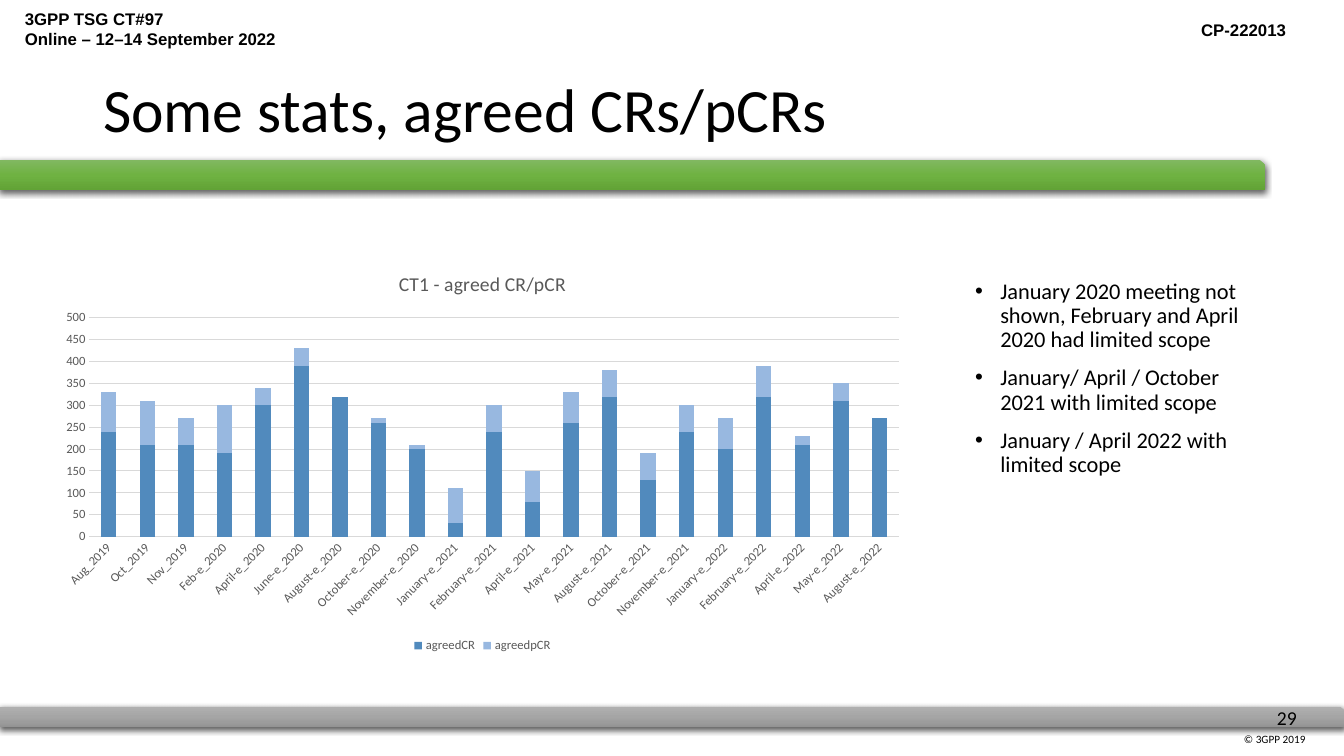
from copy import deepcopy

from pptx import Presentation
from pptx import util as u
from pptx.chart.data import CategoryChartData
from pptx.dml.color import RGBColor
from pptx.enum import chart as ch, shapes, text
from pptx.oxml import parse_xml
from pptx.oxml.ns import nsdecls, qn

PX = 914400 / 100.8
BLACK, GREY, RULE = "000000", "595959", "D9D9D9"
LEFT, RIGHT = text.PP_ALIGN.LEFT, text.PP_ALIGN.RIGHT

GREEN = ["81B861", "6FB242", "62A336"]
SILVER = ["AFAFAF", "A5A5A5", "939393"]
NOTES = [
    "January 2020 meeting not shown, February and April 2020 had limited scope",
    "January/ April / October 2021 with limited scope",
    "January / April 2022 with limited scope",
]
MEETS = [
    "Aug_2019", "Oct_2019", "Nov_2019", "Feb-e_2020", "April-e_2020",
    "June-e_2020", "August-e_2020", "October-e_2020", "November-e_2020",
    "January-e_2021", "February-e_2021", "April-e_2021", "May-e_2021",
    "August-e_2021", "October-e_2021", "November-e_2021", "January-e_2022",
    "February-e_2022", "April-e_2022", "May-e_2022", "August-e_2022",
]
SERIES = [
    ("agreedCR", "518ABD",
     [240, 210, 210, 190, 300, 390, 320, 260, 200, 30, 240, 80, 260, 320,
      130, 240, 200, 320, 210, 310, 270]),
    ("agreedpCR", "98B8E0",
     [90, 100, 60, 110, 40, 40, 0, 10, 10, 80, 60, 70, 70, 60, 60, 60, 70,
      70, 20, 40, 0]),
]


def px(*nums):
    return [u.Emu(round(n * PX)) for n in nums]


def rgb(code):
    return RGBColor.from_string(code)


def apply(obj, **vals):
    for key, val in vals.items():
        setattr(obj, key, val)


def style(font, size, color=BLACK, name="Calibri", bold=False):
    apply(font, size=u.Pt(size), name=name, bold=bold)
    font.color.rgb = rgb(color)


def place(shape, box):
    apply(shape, **dict(zip(("left", "top", "width", "height"), px(*box))))


def add_bar(slide, box, hues, depth):
    """Draw a shaded bar with a soft shadow behind the placeholders."""
    bar = slide.shapes.add_shape(shapes.MSO_SHAPE.SNIP_1_RECTANGLE, *px(*box))
    bar.line.fill.background()
    bar.fill.gradient()
    stops = bar._element.spPr.find(qn("a:gradFill")).find(qn("a:gsLst"))
    stops.append(deepcopy(stops[0]))
    for stop, hue, pos in zip(bar.fill.gradient_stops, hues, (0, 0.5, 1)):
        stop.color.rgb = rgb(hue)
        stop.position = pos
    bar.fill.gradient_angle = 270
    bar.shadow.inherit = False
    bar._element.spPr.find(qn("a:effectLst")).append(parse_xml(
        f'<a:outerShdw {nsdecls("a")} blurRad="57150" dist="19050" '
        'dir="5400000" algn="ctr" rotWithShape="0"><a:srgbClr val="000000">'
        '<a:alpha val="63000"/></a:srgbClr></a:outerShdw>'))
    slide.shapes._spTree.insert(2 + depth, bar._element)


def add_label(slide, box, lines, size, name="Calibri", bold=False,
              align=LEFT, wrap=True):
    frame = slide.shapes.add_textbox(*px(*box)).text_frame
    frame.word_wrap = wrap
    frame.text = "\n".join(lines)
    for para in frame.paragraphs:
        para.alignment = align
        style(para.font, size, name=name, bold=bold)


def add_frame(slide, wide, high):
    """Place the bars, header and footer on the page."""
    add_bar(slide, (0, high - 49, wide, 20), SILVER, 0)
    add_bar(slide, (-1, 160, wide - 78, 30), GREEN, 1)
    add_label(slide, (wide - 110, high - 29, 109, 23), ["© 3GPP 2019"], 8)
    add_label(slide, (wide - 77, high - 55, 43, 34), ["29"], 14, wrap=False)
    head = dict(size=12, name="Arial", bold=True)
    add_label(slide, (15, 4, 349, 50),
              ["3GPP TSG CT#97", "Online – 12–14 September 2022"], **head)
    add_label(slide, (wide - 334, 15, 286, 72), ["CP-222013"],
              align=RIGHT, **head)


def fill_title(slide, box):
    title = slide.shapes.title
    place(title, box)
    frame = title.text_frame
    frame.text = "Some stats, agreed CRs/pCRs"
    apply(frame, auto_size=text.MSO_AUTO_SIZE.NONE, word_wrap=True,
          vertical_anchor=text.MSO_ANCHOR.MIDDLE)
    para = frame.paragraphs[0]
    apply(para, alignment=LEFT, line_spacing=0.9)
    style(para.font, 44)


def fill_notes(slide, box):
    body = slide.placeholders[1]
    place(body, box)
    frame = body.text_frame
    frame.text = "\n".join(NOTES)
    apply(frame, auto_size=text.MSO_AUTO_SIZE.NONE, word_wrap=True)
    for i, para in enumerate(frame.paragraphs):
        apply(para, line_spacing=0.9, space_before=u.Pt(10 if i else 0))
        props = para._p.get_or_add_pPr()
        props.set("marL", "228600")
        props.set("indent", "-228600")
        for mark in ('buFont typeface="Arial"', 'buChar char="•"'):
            props.append(parse_xml(f'<a:{mark} {nsdecls("a")}/>'))
        style(para.font, 16)


def add_stats(slide, box):
    data = CategoryChartData()
    data.categories = MEETS
    for name, _, vals in SERIES:
        data.add_series(name, vals)
    kind = ch.XL_CHART_TYPE.COLUMN_STACKED
    chart = slide.shapes.add_chart(kind, *px(*box), data).chart
    style(chart.font, 10)
    chart.has_title = True
    head = chart.chart_title.text_frame
    head.text = "CT1 - agreed CR/pCR"
    style(head.paragraphs[0].font, 14, GREY)
    chart.has_legend = True
    apply(chart.legend, position=ch.XL_LEGEND_POSITION.BOTTOM,
          include_in_layout=False)
    style(chart.legend.font, 9, GREY)

    plot = chart.plots[0]
    apply(plot, gap_width=150, overlap=100, vary_by_categories=False)
    for bars, (_, hue, _) in zip(plot.series, SERIES):
        bars.format.fill.solid()
        bars.format.fill.fore_color.rgb = rgb(hue)

    cat, val = chart.category_axis, chart.value_axis
    for axis in (cat, val):
        apply(axis, major_tick_mark=ch.XL_TICK_MARK.NONE,
              minor_tick_mark=ch.XL_TICK_MARK.NONE)
        style(axis.tick_labels.font, 9, GREY)
    turn = cat._element.find(qn("c:txPr")).find(qn("a:bodyPr"))
    turn.set("rot", "-2700000")
    turn.set("vert", "horz")
    apply(val, minimum_scale=0, maximum_scale=500, major_unit=50,
          has_major_gridlines=True)
    val.format.line.fill.background()
    for line in (cat.format.line, val.major_gridlines.format.line):
        line.color.rgb = rgb(RULE)
        line.width = u.Pt(0.75)


def main():
    deck = Presentation()
    wide, high = 1344, 756
    deck.slide_width, deck.slide_height = px(wide, high)
    slide = deck.slides.add_slide(deck.slide_layouts[1])
    add_frame(slide, wide, high)
    fill_title(slide, (93, 40, 1159, 146))
    fill_notes(slide, (965, 275, 286, 404))
    add_stats(slide, (49, 253, 867, 404))
    deck.save("out.pptx")


if __name__ == "__main__":
    main()
